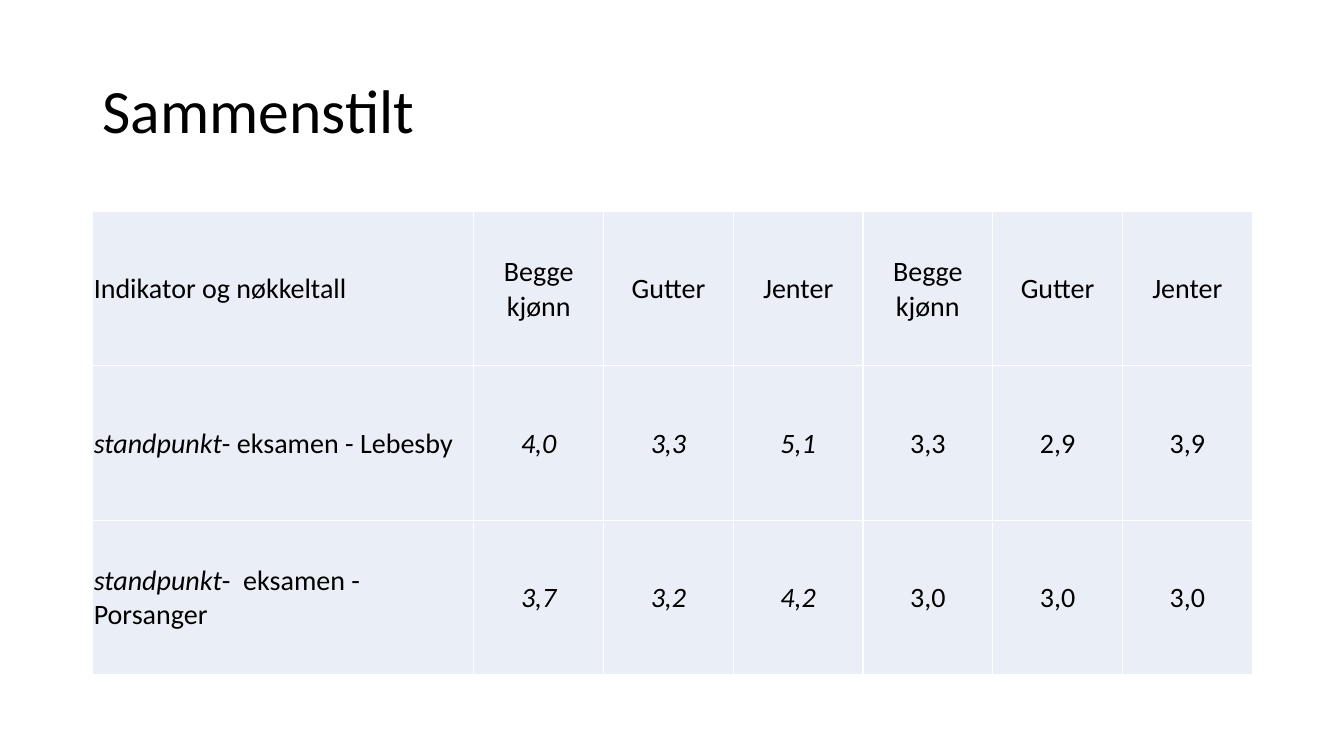
from dataclasses import dataclass

from lxml import etree
from pptx import Presentation
from pptx.dml.color import RGBColor
from pptx.enum.text import MSO_ANCHOR, PP_ALIGN
from pptx.oxml.ns import qn
from pptx.util import Inches, Pt

MIDDLE = MSO_ANCHOR.MIDDLE
LEFT, CENTER = PP_ALIGN.LEFT, PP_ALIGN.CENTER


@dataclass(frozen=True)
class Theme:
    font: str = "Calibri"
    ink: str = "000000"
    cell: str = "EAEFF7"
    rule: str = "FFFFFF"
    title: int = 44
    body: int = 20
    line: int = 1


THEME = Theme()

# Each cell is a list of (text, italic) runs
HEADS = ["Begge kjønn", "Gutter", "Jenter"]
PLACES = [
    ("- eksamen - Lebesby", ["4,0", "3,3", "5,1"], ["3,3", "2,9", "3,9"]),
    ("-  eksamen - Porsanger", ["3,7", "3,2", "4,2"], ["3,0", "3,0", "3,0"]),
]
ROWS = [[[(text, False)] for text in ["Indikator og nøkkeltall"] + HEADS * 2]]
for label, marks, exams in PLACES:
    ROWS.append([[("standpunkt", True), (label, False)]]
                + [[(mark, True)] for mark in marks]
                + [[(exam, False)] for exam in exams])


def add_runs(para, runs, size):
    for text, italic in runs:
        run = para.add_run()
        run.text = text
        font = run.font
        font.name, font.size, font.italic = THEME.font, Pt(size), italic
        font.color.rgb = RGBColor.from_string(THEME.ink)


def add_rules(cell):
    props = cell._tc.get_or_add_tcPr()
    for side in ("a:lnL", "a:lnR", "a:lnT", "a:lnB"):
        line = etree.SubElement(props, qn(side), w=str(Pt(THEME.line)))
        fill = etree.SubElement(line, qn("a:solidFill"))
        etree.SubElement(fill, qn("a:srgbClr"), val=THEME.rule)


def style_cell(cell, runs, align):
    add_rules(cell)
    cell.fill.solid()
    cell.fill.fore_color.rgb = RGBColor.from_string(THEME.cell)
    cell.vertical_anchor = MIDDLE
    cell.margin_left = cell.margin_top = cell.margin_right = Inches(0.01)
    cell.margin_bottom = 0
    para = cell.text_frame.paragraphs[0]
    para.alignment = align
    add_runs(para, runs, THEME.body)


def add_title(slide, text, left, top, width, height):
    box = slide.shapes.add_textbox(
        Inches(left), Inches(top), Inches(width), Inches(height))
    frame = box.text_frame
    frame.word_wrap = True
    frame.vertical_anchor = MIDDLE
    para = frame.paragraphs[0]
    para.line_spacing = 0.9
    add_runs(para, [(text, False)], THEME.title)


def add_marks(slide, rows, left, top, width, height, first):
    count = len(rows[0])
    table = slide.shapes.add_table(
        len(rows), count, Inches(left), Inches(top),
        Inches(width), Inches(height)).table
    table.first_row = table.horz_banding = False

    # The label column is wide; the others share the rest
    for index, col in enumerate(table.columns):
        share = first if index == 0 else (width - first) / (count - 1)
        col.width = Inches(share)
    for row in table.rows:
        row.height = Inches(height / len(rows))

    for y, row in enumerate(rows):
        for x, runs in enumerate(row):
            style_cell(table.cell(y, x), runs, CENTER if x else LEFT)


def main():
    deck = Presentation()
    deck.slide_width, deck.slide_height = Inches(13.33), Inches(7.5)
    slide = deck.slides.add_slide(deck.slide_layouts[6])
    left, width = 0.92, 11.5
    add_title(slide, "Sammenstilt", left, 0.4, width, 1.45)
    add_marks(slide, ROWS, left, 2.1, width, 4.59, first=3.78)
    deck.save("out.pptx")


if __name__ == "__main__":
    main()
